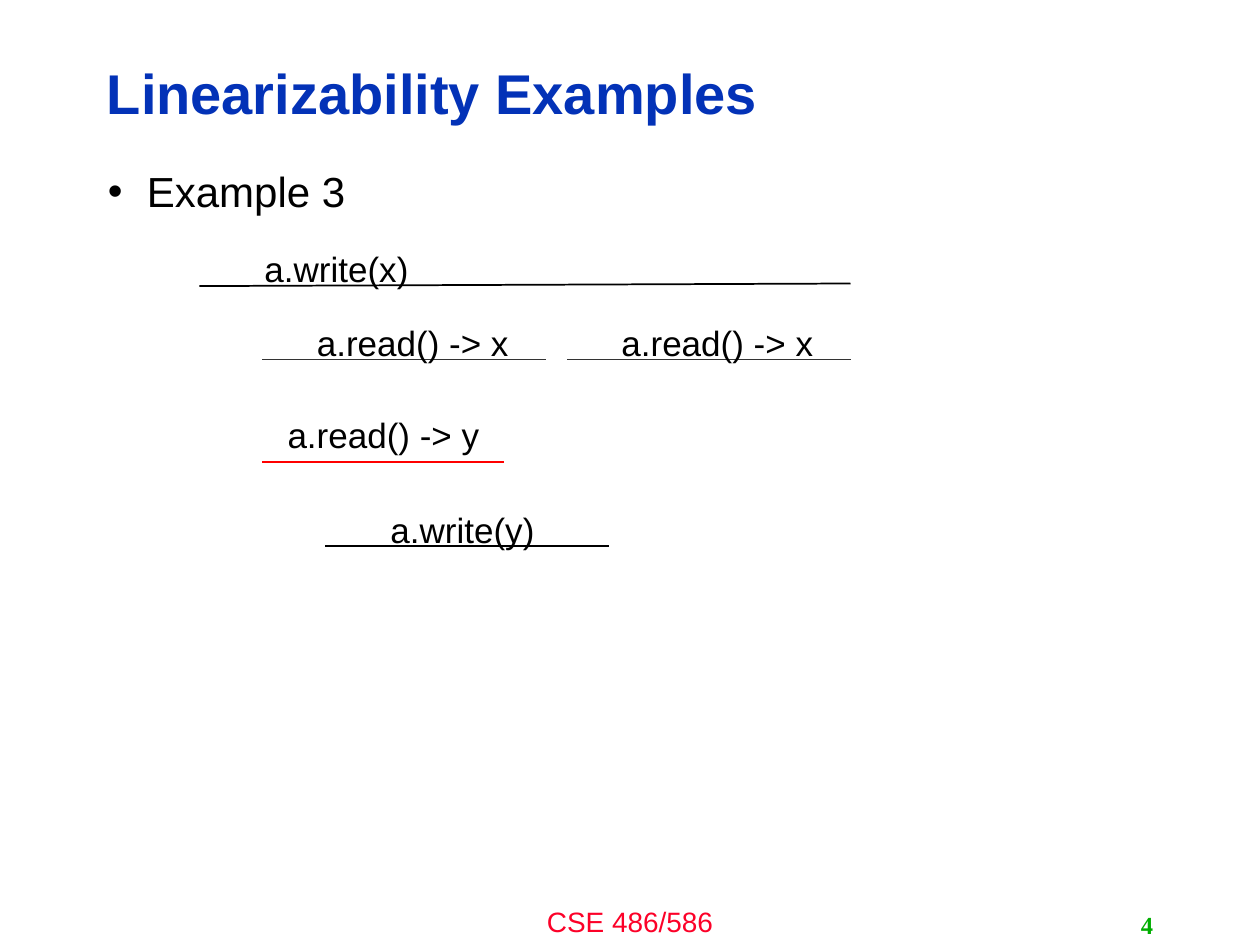
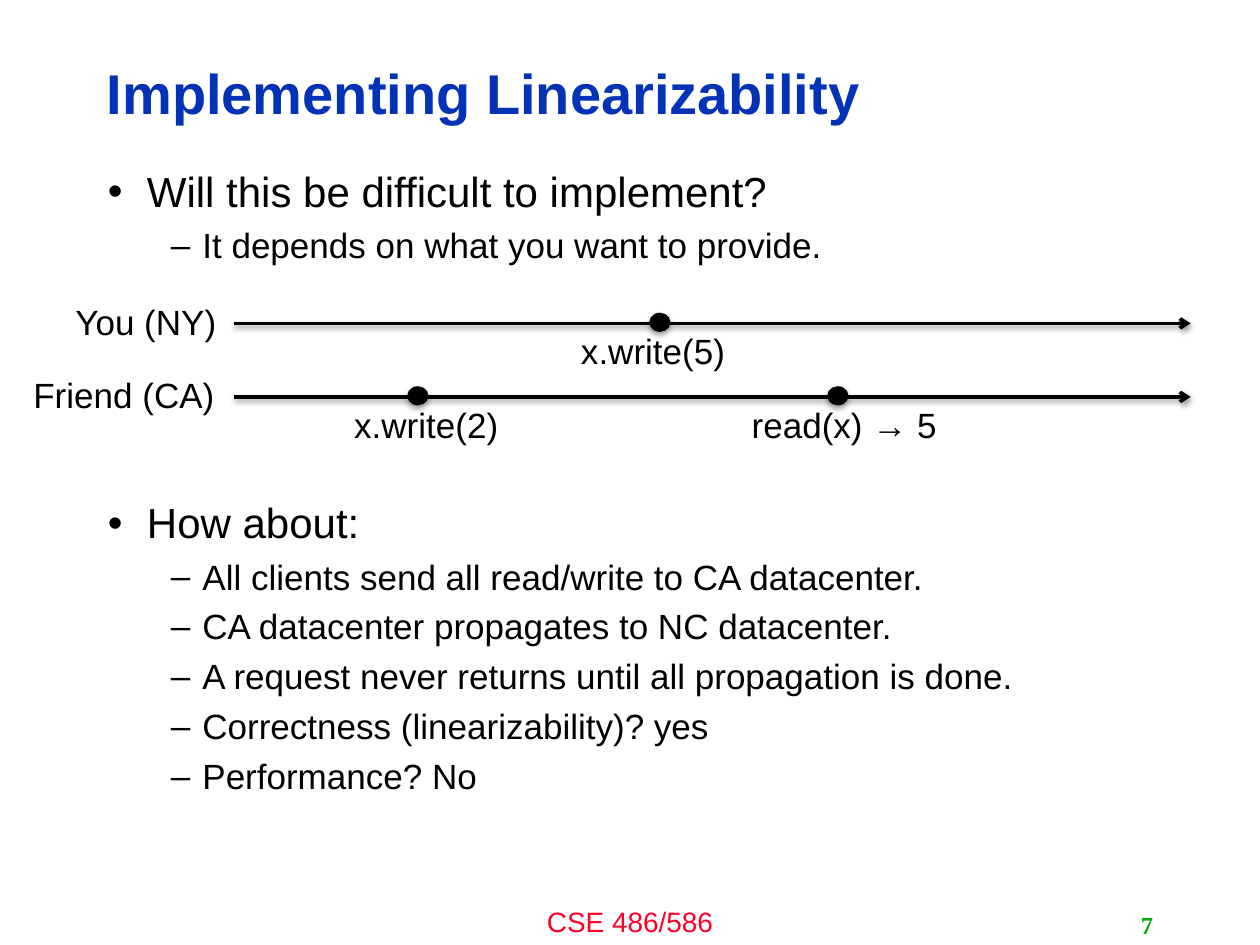
import pptx
import pptx.util
import pptx.dml.color
import pptx.enum.shapes
import pptx.enum.text
import pptx.oxml.ns
from lxml import etree

BLACK, RED, GREY = "000000", "FF0000", "333333"
BLUE, PINK, GREEN = "0332B7", "FC0128", "00AE00"
ALIGN = pptx.enum.text.PP_ALIGN
MIDDLE = pptx.enum.text.MSO_ANCHOR.MIDDLE
LABEL_H = 5.3
LEVELS = [("•", 24, 0.31, 0.31), ("–", 20, 0.75, 0.25)]  # mark, size, margin, hang


def color(code):
    return pptx.dml.color.RGBColor.from_string(code)


def sub(parent, tag, **attrs):
    """Append a drawing element, in the a: namespace, to parent."""
    node = etree.SubElement(parent, pptx.oxml.ns.qn("a:" + tag))
    for key, value in attrs.items():
        node.set(key, str(value))
    return node


class Deck:
    COLS, ROWS = 120, 90

    def __init__(self):
        self.prs = pptx.Presentation()
        self.prs.slide_width = pptx.util.Inches(10)
        self.prs.slide_height = pptx.util.Inches(7.5)
        self.slide = None

    def x(self, cols):
        return round(self.prs.slide_width * cols / self.COLS)

    def y(self, rows):
        return round(self.prs.slide_height * rows / self.ROWS)

    def box(self, left, top, wide, high):
        return self.x(left), self.y(top), self.x(wide), self.y(high)

    def page(self, title, number):
        """Start a slide with its title, footer and number."""
        self.slide = self.prs.slides.add_slide(self.prs.slide_layouts[6])
        self.text("CSE 486/586", 40, 85.6, 40, 4.4, 16, PINK, ALIGN.CENTER)
        head = self.text(title, 9, 4.3, 95.8, 9.7, 32, BLUE, bold=True, anchor=MIDDLE)
        head.line_spacing = 0.9
        self.text(str(number), 86, 86.2, 25, 3.8, 14, GREEN, ALIGN.RIGHT,
                  bold=True, face="Times New Roman", anchor=MIDDLE)

    def frame(self, left, top, wide, high):
        frame = self.slide.shapes.add_textbox(*self.box(left, top, wide, high)).text_frame
        frame.word_wrap = True
        return frame

    def style(self, para, size, hue=BLACK, bold=False, face="Arial"):
        font = para.font
        font.size, font.name, font.bold = pptx.util.Pt(size), face, bold
        font.color.rgb = color(hue)

    def text(self, words, left, top, wide, high=LABEL_H, size=20, hue=BLACK,
             align=ALIGN.LEFT, bold=False, face="Arial", anchor=None):
        frame = self.frame(left, top, wide, high)
        if anchor is not None:
            frame.vertical_anchor = anchor
        para = frame.paragraphs[0]
        para.text, para.alignment = words, align
        self.style(para, size, hue, bold, face)
        return para

    def body(self, items):
        """Write (level, words, gap before in points or None) as bullets."""
        frame = self.frame(9.1, 15.7, 100.8, 65)
        for i, (level, words, gap) in enumerate(items):
            para = frame.add_paragraph() if i else frame.paragraphs[0]
            mark, size, margin, hang = LEVELS[level]
            para.text, para.level, para.line_spacing = words, level, 0.9
            if i:
                para.space_before = pptx.util.Pt(gap or size * 0.345)
            self.style(para, size)
            props = para._p.get_or_add_pPr()
            props.set("marL", str(pptx.util.Inches(margin)))
            props.set("indent", str(-pptx.util.Inches(hang)))
            sub(props, "buFont", typeface="Arial")
            sub(props, "buChar", char=mark)

    def shade(self, shape, alpha=0, dist=0):
        """Give a shape a soft shadow below it, or none at all."""
        effects = sub(shape._element.spPr, "effectLst")
        if alpha:
            outer = sub(effects, "outerShdw", blurRad=40000, dist=dist,
                        dir=5400000, rotWithShape=0)
            sub(sub(outer, "srgbClr", val=BLACK), "alpha", val=alpha * 1000)

    def line(self, x1, y1, x2, y2, hue=BLACK, width=1, arrow=False):
        line = self.slide.shapes.add_connector(
            pptx.enum.shapes.MSO_CONNECTOR.STRAIGHT,
            self.x(x1), self.y(y1), self.x(x2), self.y(y2))
        line.line.color.rgb = color(hue)
        line.line.width = pptx.util.Pt(width)
        if arrow:
            sub(line.line._get_or_add_ln(), "tailEnd", type="arrow")
            self.shade(line, 38, 20000)
        else:
            self.shade(line)

    def dot(self, mid, row):
        wide, high = 1.9, 1.7
        dot = self.slide.shapes.add_shape(
            pptx.enum.shapes.MSO_SHAPE.OVAL,
            *self.box(mid - wide / 2, row - high / 2, wide, high))
        dot.fill.solid()
        dot.fill.fore_color.rgb = color(BLACK)
        dot.line.color.rgb = color(BLACK)
        dot.line.width = pptx.util.Pt(0.75)
        self.shade(dot, 35, 23000)

    def event(self, words, mid, row, shift):
        """Mark a moment on a timeline, its label moved by shift columns."""
        wide = 41.2
        self.dot(mid, row - 0.1)
        self.text(words, mid + shift - wide / 2, row, wide, align=ALIGN.CENTER)


def examples(deck):
    deck.page("Linearizability Examples", 4)
    deck.body([(0, "Example 3", None)])
    # words, label column, row and width, line start, end, row, colour, width
    calls = [
        ("a.write(x)", 24, 23, 16.4, 19, 81, 27.25, BLACK, 1),
        ("a.read() -> x", 29, 30, 21, 25, 52, 34.2, GREY, 0.5),
        ("a.read() -> x", 58, 30, 21, 54, 81, 34.2, GREY, 0.5),
        ("a.read() -> y", 26.2, 38.8, 21, 25, 48, 44, RED, 1),
        ("a.write(y)", 36, 47.8, 16.4, 31, 58, 52, BLACK, 1),
    ]
    for words, left, top, wide, start, end, row, hue, width in calls:
        rise = 0.25 if row == 27.25 else 0
        deck.line(start, row, end, row - rise, hue, width)
        deck.text(words, left, top, wide)


def building(deck):
    deck.page("Implementing Linearizability", 7)
    deck.body([
        (0, "Will this be difficult to implement?", None),
        (1, "It depends on what you want to provide.", None),
        (0, "How about:", 135),
        (1, "All clients send all read/write to CA datacenter.", None),
        (1, "CA datacenter propagates to NC datacenter.", None),
        (1, "A request never returns until all propagation is done.", None),
        (1, "Correctness (linearizability)? yes", None),
        (1, "Performance? No", None),
    ])
    sites = [
        ("You (NY)", 6, 16, 30.8, [("x.write(5)", 62.85, -0.65)]),
        ("Friend (CA)", 2, 20, 37.8,
         [("x.write(2)", 39.8, 0.8), ("read(x) → 5", 79.8, 0.6)]),
    ]
    for name, left, wide, row, events in sites:
        deck.line(22.3, row, 113.4, row, width=2, arrow=True)
        deck.text(name, left, row - 2.8, wide)
        for words, mid, shift in events:
            deck.event(words, mid, row, shift)


def main():
    deck = Deck()
    examples(deck)
    building(deck)
    deck.prs.save("out.pptx")


if __name__ == "__main__":
    main()
